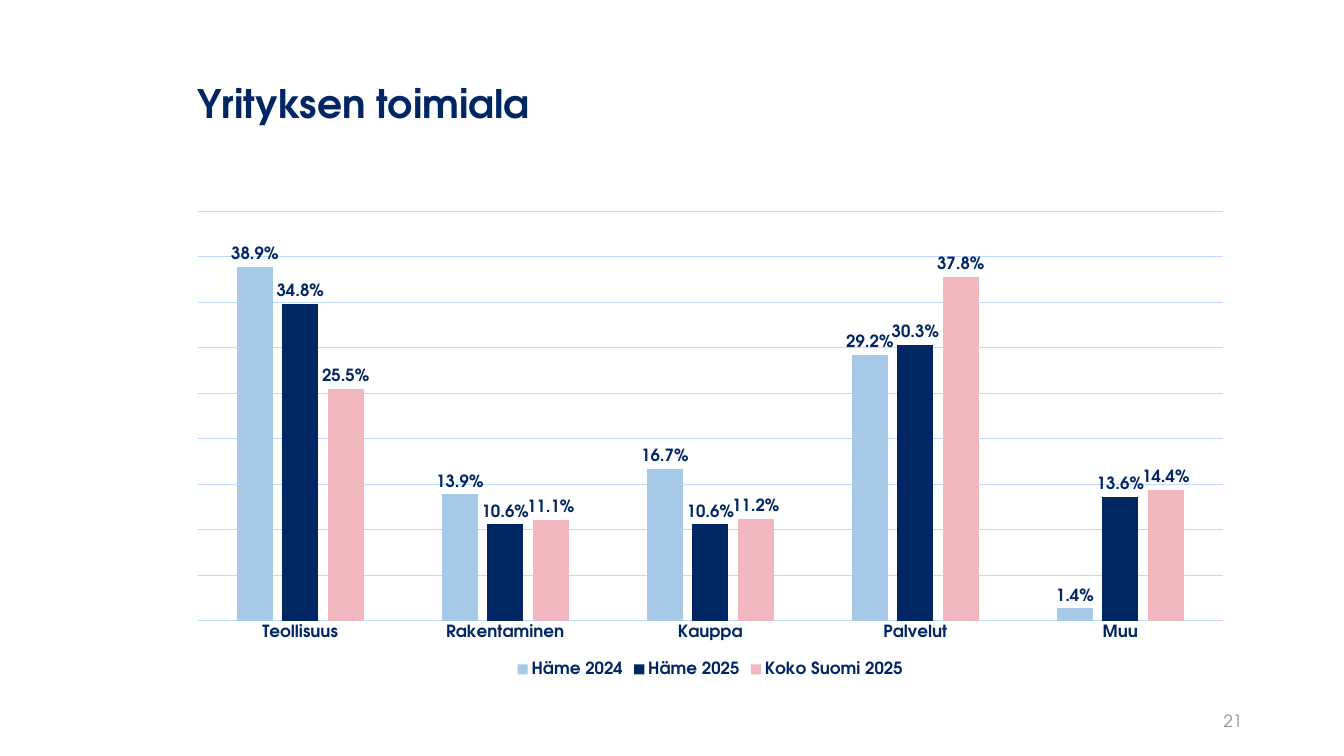
from dataclasses import dataclass

from pptx import Presentation
from pptx.chart.data import CategoryChartData
from pptx.dml.color import RGBColor
from pptx.enum.chart import XL_CHART_TYPE, XL_LABEL_POSITION, XL_LEGEND_POSITION, XL_TICK_MARK
from pptx.enum.text import MSO_ANCHOR, MSO_AUTO_SIZE, PP_ALIGN
from pptx.util import Inches, Pt


@dataclass(frozen=True)
class Theme:
    font: str = "TeX Gyre Adventor"
    navy: str = "002663"
    grey: str = "8C8E9F"
    grid: str = "C1D9FF"
    series: tuple = ("A5C9E7", "002663", "F2B7BF")
    title_size: int = 28
    small_size: int = 12
    line_width: float = 0.75


THEME = Theme()
WIDTH, HEIGHT = 13.33, 7.5
LEFT, CONTENT_WIDTH = 1.75, 10.59  # column shared by title and chart
PERCENT = "0.0%"

SECTORS = ("Teollisuus", "Rakentaminen", "Kauppa", "Palvelut", "Muu")
SHARES = {
    "Häme 2024": (0.389, 0.139, 0.167, 0.292, 0.014),
    "Häme 2025": (0.348, 0.106, 0.106, 0.303, 0.136),
    "Koko Suomi 2025": (0.255, 0.111, 0.112, 0.378, 0.144),
}


def area(left, top, width, height):
    return [Inches(value) for value in (left, top, width, height)]


def style_font(font, size=THEME.small_size, color=THEME.navy, bold=True):
    font.name = THEME.font
    font.size = Pt(size)
    font.bold = bold
    font.color.rgb = RGBColor.from_string(color)


def style_line(line):
    line.color.rgb = RGBColor.from_string(THEME.grid)
    line.width = Pt(THEME.line_width)


def set_text(box, text, align, **font_style):
    frame = box.text_frame
    frame.text = text
    frame.word_wrap = True
    frame.auto_size = MSO_AUTO_SIZE.NONE
    frame.vertical_anchor = MSO_ANCHOR.MIDDLE
    para = frame.paragraphs[0]
    para.alignment = align
    style_font(para.runs[0].font, **font_style)
    return para


def add_title(page, text):
    title = page.shapes.title
    title.left, title.top, title.width, title.height = area(LEFT, 0.4, CONTENT_WIDTH, 1.3)
    para = set_text(title, text, PP_ALIGN.LEFT, size=THEME.title_size)
    para.line_spacing = 0.9
    title.text_frame.margin_left = Inches(0.21)


def add_page_number(page, number):
    box = page.shapes.add_textbox(*area(9.42, 6.95, 3, 0.4))
    set_text(box, str(number), PP_ALIGN.RIGHT, color=THEME.grey, bold=False)


def style_axes(chart):
    categories = chart.category_axis
    categories.major_tick_mark = XL_TICK_MARK.NONE
    categories.minor_tick_mark = XL_TICK_MARK.NONE
    categories.has_major_gridlines = False
    style_line(categories.format.line)
    style_font(categories.tick_labels.font)

    values = chart.value_axis
    values.minimum_scale, values.maximum_scale, values.major_unit = 0, 0.45, 0.05
    values.has_major_gridlines = True
    style_line(values.major_gridlines.format.line)
    values.tick_labels.number_format = PERCENT
    values.tick_labels.number_format_is_linked = False
    values.visible = False


def style_series(series, color):
    series.format.fill.solid()
    series.format.fill.fore_color.rgb = RGBColor.from_string(color)
    labels = series.data_labels
    labels.show_value = True
    labels.position = XL_LABEL_POSITION.OUTSIDE_END
    labels.number_format = PERCENT
    labels.number_format_is_linked = False
    style_font(labels.font)


def add_column_chart(page, categories, shares):
    data = CategoryChartData(number_format=PERCENT)
    data.categories = categories
    for name, values in shares.items():
        data.add_series(name, values)
    frame = page.shapes.add_chart(
        XL_CHART_TYPE.COLUMN_CLUSTERED, *area(LEFT, 2, CONTENT_WIDTH, 4.76), data
    )
    chart = frame.chart
    chart.has_title = False
    style_font(chart.font)
    style_axes(chart)

    # Columns
    plot = chart.plots[0]
    plot.vary_by_categories = False
    plot.gap_width, plot.overlap = 219, -27
    for series, color in zip(plot.series, THEME.series):
        style_series(series, color)

    # Legend
    chart.has_legend = True
    chart.legend.position = XL_LEGEND_POSITION.BOTTOM
    chart.legend.include_in_layout = False
    style_font(chart.legend.font)


def main():
    deck = Presentation()
    deck.slide_width, deck.slide_height = Inches(WIDTH), Inches(HEIGHT)
    page = deck.slides.add_slide(deck.slide_layouts.get_by_name("Title Only"))
    add_title(page, "Yrityksen toimiala")
    add_page_number(page, 21)
    add_column_chart(page, SECTORS, SHARES)
    deck.save("out.pptx")


if __name__ == "__main__":
    main()
